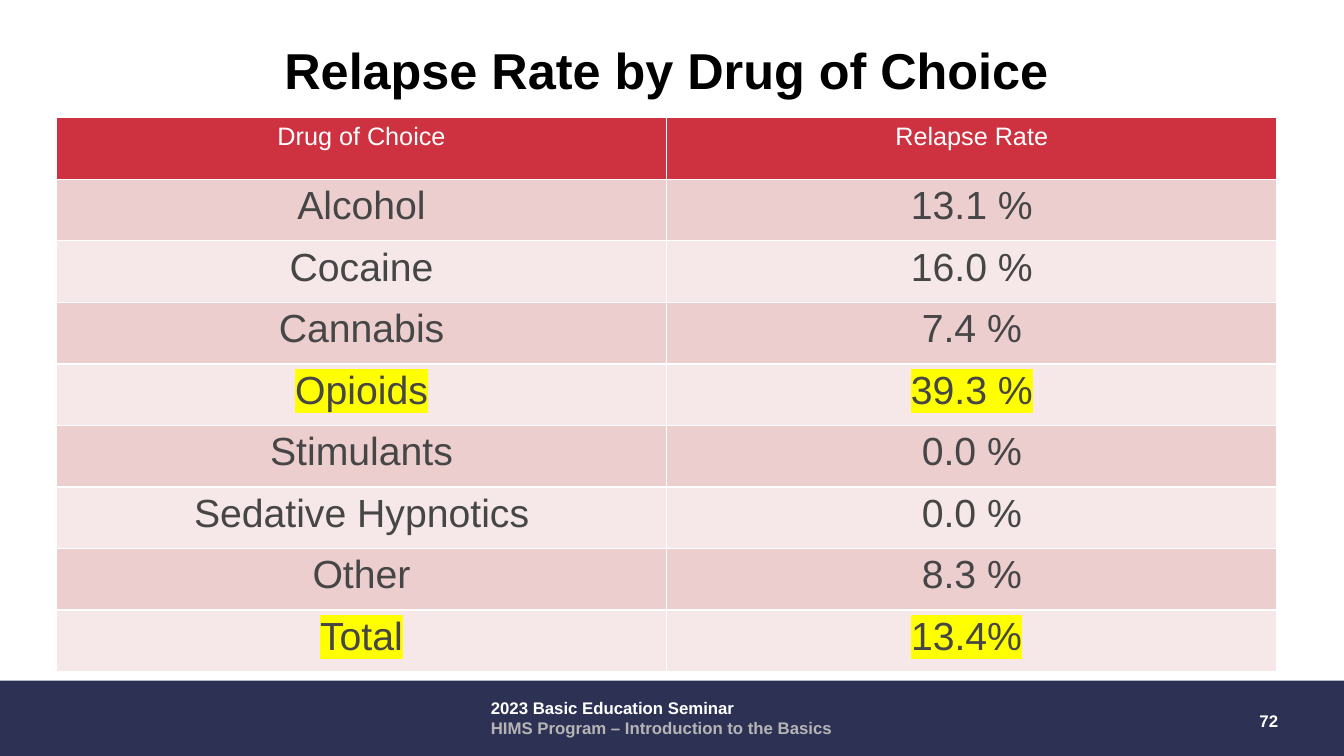
from typing import NamedTuple

import pptx
import pptx.dml.color
import pptx.enum.shapes
import pptx.enum.text
import pptx.oxml
import pptx.oxml.ns
import pptx.util

Cm = pptx.util.Cm
Pt = pptx.util.Pt
Align = pptx.enum.text.PP_ALIGN
Anchor = pptx.enum.text.MSO_ANCHOR
NS = pptx.oxml.ns.nsdecls("a")

WHITE = "FFFFFF"
YELLOW = "FFFF00"
BANDS = ("F6E8E8", "EDCECF")


class Rate(NamedTuple):
    drug: str
    rate: str
    marked: bool = False


class Label(NamedTuple):
    text: str
    left: float
    top: float
    width: float
    height: float
    size: int
    colors: tuple[str, ...]
    align: Align
    anchor: Anchor = Anchor.TOP


RATES = [
    Rate("Alcohol", "13.1 %"),
    Rate("Cocaine", "16.0 %"),
    Rate("Cannabis", "7.4 %"),
    Rate("Opioids", "39.3 %", True),
    Rate("Stimulants", "0.0 %"),
    Rate("Sedative Hypnotics", "0.0 %"),
    Rate("Other", "8.3 %"),
    Rate("Total", "13.4%", True),
]

LABELS = [
    Label("2023 Basic Education Seminar\vHIMS Program – Introduction to the Basics",
          12.12, 17.45, 9.63, 1.27, 12, (WHITE, "B5B5B5"), Align.LEFT),
    Label("Relapse Rate by Drug of Choice",
          1.42, 0.76, 30.76, 1.98, 36, ("000000",), Align.CENTER, Anchor.MIDDLE),
    Label("72", 30.76, 17.78, 1.7, 0.64, 12, (WHITE,), Align.RIGHT),
]


def color(code: str) -> pptx.dml.color.RGBColor:
    return pptx.dml.color.RGBColor.from_string(code)


def style(run, size: int, code: str, bold: bool = False) -> None:
    run.font.size = Pt(size)
    run.font.bold = bold
    run.font.color.rgb = color(code)
    run.font.name = "Arial"


def mark(run) -> None:
    light = pptx.oxml.parse_xml(
        f'<a:highlight {NS}><a:srgbClr val="{YELLOW}"/></a:highlight>')
    run.font._element.find(pptx.oxml.ns.qn("a:solidFill")).addnext(light)


def edge(cell) -> None:
    props = cell._tc.get_or_add_tcPr()
    for spot, side in enumerate("LRTB"):
        props.insert(spot, pptx.oxml.parse_xml(
            f'<a:ln{side} {NS} w="{Pt(1)}"><a:solidFill>'
            f'<a:srgbClr val="{WHITE}"/></a:solidFill></a:ln{side}>'))


def write(slide, label: Label) -> None:
    box = slide.shapes.add_textbox(
        Cm(label.left), Cm(label.top), Cm(label.width), Cm(label.height))
    frame = box.text_frame
    frame.word_wrap = True
    frame.vertical_anchor = label.anchor
    line = frame.paragraphs[0]
    line.text = label.text
    line.alignment = label.align
    for run, code in zip(line.runs, label.colors):
        style(run, label.size, code, True)


def put(cell, text: str, size: int, ink: str, fill: str, marked: bool = False) -> None:
    cell.fill.solid()
    cell.fill.fore_color.rgb = color(fill)
    edge(cell)
    line = cell.text_frame.paragraphs[0]
    line.text = text
    line.alignment = Align.CENTER
    style(line.runs[0], size, ink)
    if marked:
        mark(line.runs[0])


def chart_rates(slide) -> None:
    count = len(RATES) + 1
    table = slide.shapes.add_table(
        count, 2, Cm(1.42), Cm(2.97), Cm(30.76), Cm(1.55 * count)).table
    for col, text in enumerate(("Drug of Choice", "Relapse Rate")):
        put(table.cell(0, col), text, 18, WHITE, "CE3240")
    for row, item in enumerate(RATES, 1):
        for col, text in enumerate((item.drug, item.rate)):
            put(table.cell(row, col), text, 28, "464646", BANDS[row % 2], item.marked)
    table.cell(count - 1, 1).margin_right = Cm(0.52)


def main() -> None:
    deck = pptx.Presentation()
    deck.slide_width, deck.slide_height = Cm(33.87), Cm(19.05)
    slide = deck.slides.add_slide(deck.slide_layouts[6])
    band = slide.shapes.add_shape(
        pptx.enum.shapes.MSO_SHAPE.RECTANGLE, 0, Cm(17.15), Cm(33.87), Cm(1.9))
    band.shadow.inherit = False
    band.fill.solid()
    band.fill.fore_color.rgb = color("2D3255")
    band.line.fill.background()
    chart_rates(slide)
    for label in LABELS:
        write(slide, label)
    deck.save("out.pptx")


if __name__ == "__main__":
    main()
